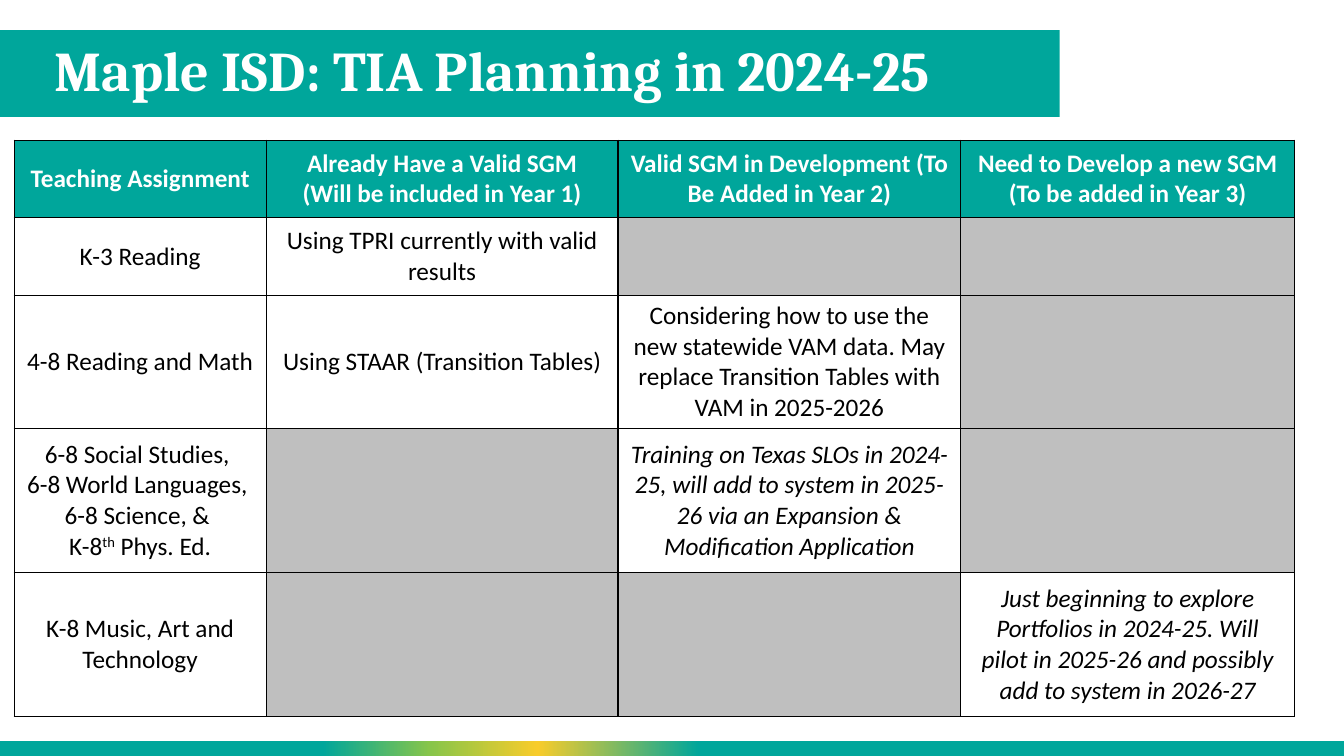
from dataclasses import dataclass

from lxml.etree import SubElement
from pptx import Presentation
from pptx.dml.color import RGBColor
from pptx.enum.shapes import MSO_SHAPE
from pptx.enum.text import MSO_ANCHOR, PP_ALIGN
from pptx.oxml import parse_xml
from pptx.oxml.ns import nsdecls, qn
from pptx.util import Inches, Pt


@dataclass(frozen=True)
class Theme:
    teal: str = "00A69B"
    yellow: str = "F8CC2B"
    green: str = "87C54A"
    white: str = "FFFFFF"
    black: str = "000000"
    gray: str = "BFBFBF"
    title_font: str = "Cambria"
    table_font: str = "Calibri"
    title_size: int = 40
    table_size: int = 18
    border: float = 1


THEME = Theme()
SLIDE_WIDTH, SLIDE_HEIGHT = 13.33, 7.5

COLUMN_WIDTHS = [2.5, 3.49, 3.4, 3.31]
ROW_HEIGHTS = [0.77, 0.77, 1.32, 1.43, 1.43]
HEADINGS = [
    "Teaching Assignment",
    "Already Have a Valid SGM\n(Will be included in Year 1)",
    "Valid SGM in Development (To Be Added in Year 2)",
    "Need to Develop a new SGM (To be added in Year 3)",
]
# None is a grayed-out cell; text between ^ marks is superscript
ASSIGNMENTS = [
    ["K-3 Reading", "Using TPRI currently with valid results", None, None],
    ["4-8 Reading and Math", "Using STAAR (Transition Tables)",
     "Considering how to use the new statewide VAM data. May replace "
     "Transition Tables with VAM in 2025-2026", None],
    ["6-8 Social Studies, \n6-8 World Languages, \n6-8 Science, & \nK-8^th^ Phys. Ed.",
     None,
     "Training on Texas SLOs in 2024-25, will add to system in 2025-26 via an "
     "Expansion & Modification Application", None],
    ["K-8 Music, Art and Technology", None, None,
     "Just beginning to explore Portfolios in 2024-25. Will pilot in 2025-26 "
     "and possibly add to system in 2026-27"],
]
ITALIC_CELLS = {(3, 2), (4, 3)}


def write_text(frame, text, *, font, size, color, bold=False, italic=False,
               align=PP_ALIGN.LEFT, line_spacing=None):
    for index, line in enumerate(text.split("\n")):
        paragraph = frame.add_paragraph() if index else frame.paragraphs[0]
        paragraph.alignment = align
        paragraph.line_spacing = line_spacing
        for part, words in enumerate(line.split("^")):
            run = paragraph.add_run()
            run.text = words
            run.font.name, run.font.size = font, Pt(size)
            run.font.bold, run.font.italic = bold, italic
            run.font.color.rgb = RGBColor.from_string(color)
            if part % 2:
                run.font._element.set("baseline", "30000")


def add_bar(slide, left, top, width, height):
    bar = slide.shapes.add_shape(MSO_SHAPE.RECTANGLE, Inches(left), Inches(top),
                                 Inches(width), Inches(height))
    bar.shadow.inherit = False
    bar.line.fill.background()
    bar.fill.solid()
    bar.fill.fore_color.rgb = RGBColor.from_string(THEME.teal)
    return bar


def add_title_band(slide, text, left, top, width, height):
    add_bar(slide, left, top, width, height)
    indent = 0.45
    title = slide.shapes.title
    title.left, title.top = Inches(left + indent), Inches(top)
    title.width, title.height = Inches(width - indent), Inches(height)
    title.text_frame.vertical_anchor = MSO_ANCHOR.MIDDLE
    title.text_frame.word_wrap = True
    write_text(title.text_frame, text, font=THEME.title_font, size=THEME.title_size,
               color=THEME.white, bold=True, line_spacing=0.9)
    # Bring the title in front of its band
    title.element.getparent().append(title.element)


def add_footer_bar(slide, left, top, width, height):
    bar = add_bar(slide, left, top, width, height)
    stops = [(0, THEME.teal), (48, THEME.teal), (60, THEME.yellow),
             (68, THEME.green), (76, THEME.teal), (100, THEME.teal)]
    stop_xml = "".join(f'<a:gs pos="{position * 1000}"><a:srgbClr val="{color}"/></a:gs>'
                       for position, color in stops)
    gradient = parse_xml(f'<a:gradFill {nsdecls("a")}><a:gsLst>{stop_xml}</a:gsLst>'
                         '<a:lin ang="10800000" scaled="0"/></a:gradFill>')
    properties = bar.element.spPr
    properties.replace(properties.find(qn("a:solidFill")), gradient)


def add_borders(cell):
    properties = cell._tc.get_or_add_tcPr()
    for side in ("lnL", "lnR", "lnT", "lnB"):
        line = SubElement(properties, qn(f"a:{side}"), w=str(Pt(THEME.border)))
        SubElement(SubElement(line, qn("a:solidFill")), qn("a:srgbClr"), val=THEME.black)


def fill_cell(cell, text, heading, italic):
    add_borders(cell)
    cell.vertical_anchor = MSO_ANCHOR.MIDDLE
    if heading or text is None:
        cell.fill.solid()
        cell.fill.fore_color.rgb = RGBColor.from_string(THEME.teal if heading else THEME.gray)
    else:
        cell.fill.background()
    if text is not None:
        write_text(cell.text_frame, text, font=THEME.table_font, size=THEME.table_size,
                   color=THEME.white if heading else THEME.black,
                   bold=heading, italic=italic, align=PP_ALIGN.CENTER)


def add_planning_table(slide, left, top):
    rows = [HEADINGS, *ASSIGNMENTS]
    table = slide.shapes.add_table(
        len(rows), len(HEADINGS), Inches(left), Inches(top),
        Inches(sum(COLUMN_WIDTHS)), Inches(sum(ROW_HEIGHTS))).table
    table.first_row = table.horz_banding = False
    for column, width in zip(table.columns, COLUMN_WIDTHS):
        column.width = Inches(width)
    for row, height in zip(table.rows, ROW_HEIGHTS):
        row.height = Inches(height)
    for row_index, row in enumerate(rows):
        for column_index, text in enumerate(row):
            fill_cell(table.cell(row_index, column_index), text,
                      heading=row_index == 0,
                      italic=(row_index, column_index) in ITALIC_CELLS)


def build_planning_slide(presentation):
    slide = presentation.slides.add_slide(presentation.slide_layouts[5])
    # Footer
    add_footer_bar(slide, 0, 7.35, SLIDE_WIDTH, 0.15)
    # Title
    add_title_band(slide, "Maple ISD: TIA Planning in 2024-25", -0.01, 0.3, 10.52, 0.86)
    # Planning table
    add_planning_table(slide, 0.14, 1.39)


def main():
    presentation = Presentation()
    presentation.slide_width = Inches(SLIDE_WIDTH)
    presentation.slide_height = Inches(SLIDE_HEIGHT)
    build_planning_slide(presentation)
    presentation.save("out.pptx")


if __name__ == "__main__":
    main()
